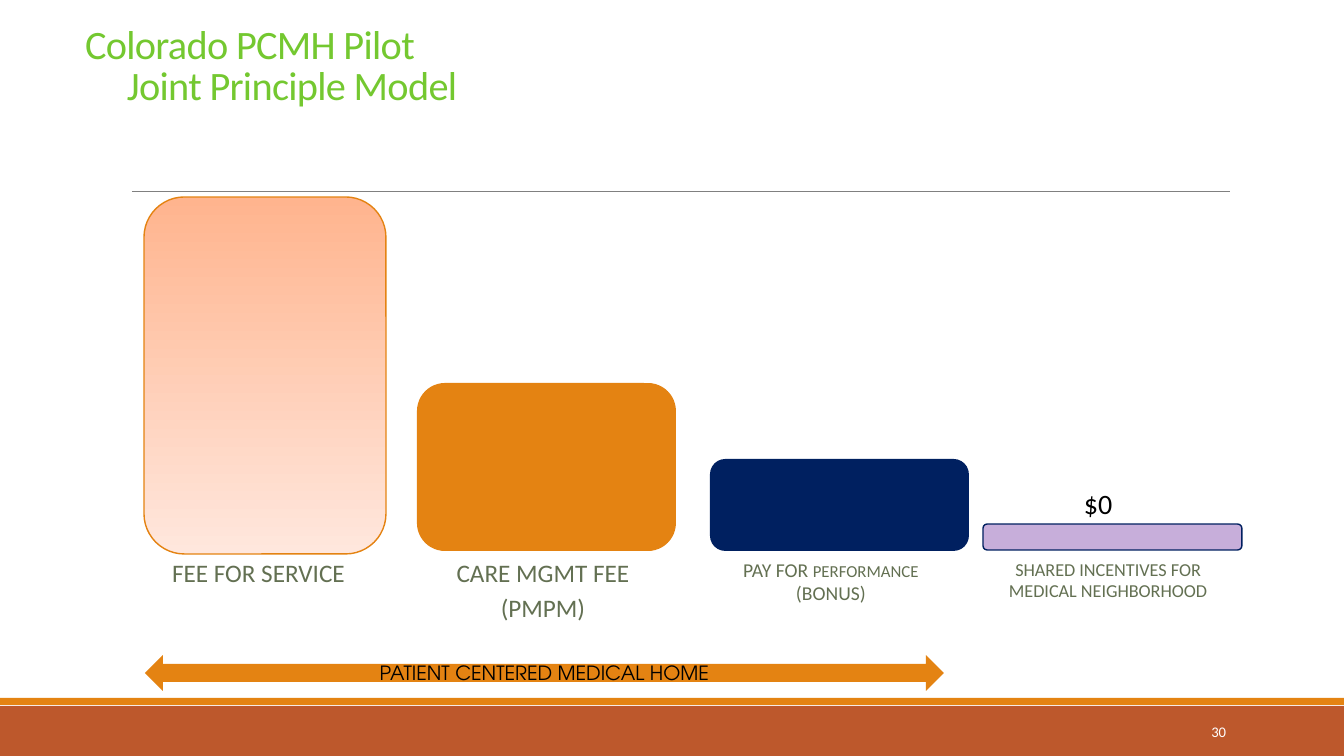
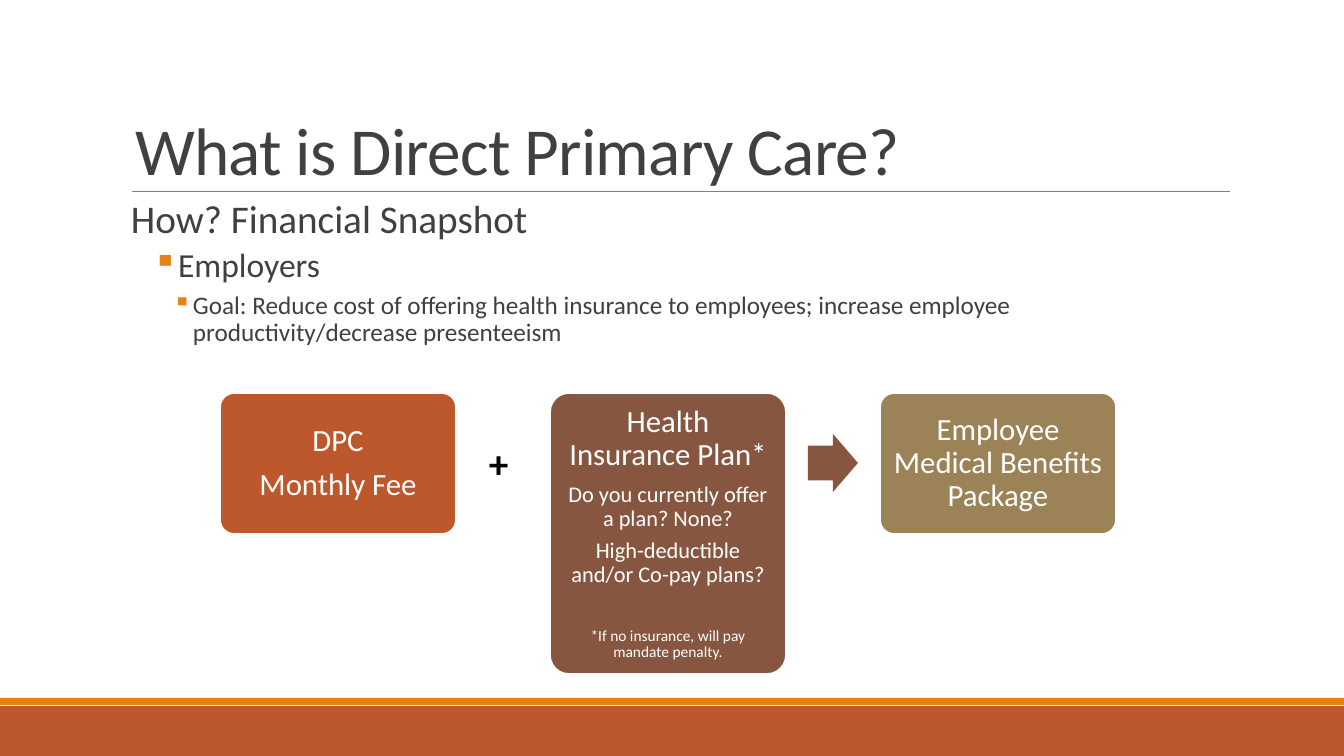
import lxml.etree
import pptx
import pptx.dml.color
import pptx.enum.shapes
import pptx.enum.text
import pptx.oxml.ns
import pptx.util

SCALE = 914400 / 100.8
SHAPE = pptx.enum.shapes.MSO_SHAPE
ALIGN = pptx.enum.text.PP_ALIGN
ANCHOR = pptx.enum.text.MSO_ANCHOR
RUST, ORANGE, GREEN, GRAY = "BD582C", "E48312", "74C830", "404040"
BROWN, TAN, OLIVE, NAVY = "865640", "9B8357", "637052", "002060"
PURPLE, WHITE, BLACK, RULE = "7030A0", "FFFFFF", "000000", "808080"
PEACH = ("FFB48E", "FFE7DD")


def px(*lengths):
    """Turn pixel lengths into EMU."""
    return [pptx.util.Emu(round(length * SCALE)) for length in lengths]


def rgb(code):
    """Turn a hex string into a colour."""
    return pptx.dml.color.RGBColor.from_string(code)


def assign(target, values):
    """Set each named attribute on the target."""
    for name, value in values.items():
        setattr(target, name, value)


def add_xml(parent, tag, **attributes):
    """Append a DrawingML element."""
    name = pptx.oxml.ns.qn("a:" + tag)
    return lxml.etree.SubElement(parent, name, attributes)


class Slides:
    """Holds the deck, its style and the current page."""

    def __init__(self):
        """Open an empty deck."""
        self.deck = pptx.Presentation()
        size = px(1344, 756)
        assign(self.deck, {"slide_width": size[0], "slide_height": size[1]})
        self.page = None

    def start(self, place, title_paragraphs, size, color):
        """Add a page with the bands, rule and title."""
        self.page = self.deck.slides.add_slide(self.deck.slide_layouts[6])
        self.shape(SHAPE.RECTANGLE, (0, 706, 1344, 50), RUST)
        self.shape(SHAPE.RECTANGLE, (0, 698, 1344, 7), ORANGE)
        self.rule(132, 1230, 191)
        paragraphs = [
            {"spans": [(words, size)], "left": left, "format": {"line_spacing": 0.85}}
            for words, left in title_paragraphs
        ]
        self.text(place, paragraphs, color, anchor=ANCHOR.BOTTOM, tracking=-50)

    def rule(self, left, right, top):
        """Draw a thin horizontal line."""
        line = self.page.shapes.add_connector(
            pptx.enum.shapes.MSO_CONNECTOR.STRAIGHT, *px(left, top, right, top))
        line.line.color.rgb = rgb(RULE)
        line.line.width = pptx.util.Pt(0.5)
        add_xml(line._element.spPr, "effectLst")

    def shape(self, kind, place, fill, line=None, width=1, adjust=(), opacity=None):
        """Draw a preset shape with a plain or gradient fill."""
        shape = self.page.shapes.add_shape(kind, *px(*place))
        shape.shadow.inherit = False
        for index, value in enumerate(adjust):
            shape.adjustments[index] = value
        if isinstance(fill, tuple):
            shape.fill.gradient()
            shape.fill.gradient_angle = 270
            for stop, color in zip(shape.fill.gradient_stops, fill):
                stop.color.rgb = rgb(color)
        else:
            shape.fill.solid()
            shape.fill.fore_color.rgb = rgb(fill)
        if opacity:
            color = shape._element.spPr.find(".//" + pptx.oxml.ns.qn("a:srgbClr"))
            add_xml(color, "alpha", val=str(opacity * 1000))
        if line:
            shape.line.color.rgb = rgb(line)
            shape.line.width = pptx.util.Pt(width)
        else:
            shape.line.fill.background()
        return shape

    def text(self, place, paragraphs, color, **style):
        """Place a text box."""
        box = self.page.shapes.add_textbox(*px(*place))
        self.fill_text(box, paragraphs, color, **style)

    def fill_text(self, box, paragraphs, color, font="Calibri", anchor=ANCHOR.TOP,
                  inset=(10, 5), wrap=True, tracking=0, bold=False):
        """Fill a box with styled paragraphs."""
        across, down = px(*inset)
        frame = box.text_frame
        assign(frame, {"word_wrap": wrap, "vertical_anchor": anchor,
                       "margin_left": across, "margin_right": across,
                       "margin_top": down, "margin_bottom": down})
        for index, content in enumerate(paragraphs):
            para = frame.paragraphs[0] if index == 0 else frame.add_paragraph()
            assign(para, {"alignment": ALIGN.LEFT, **content.get("format", {})})
            properties = para._p.get_or_add_pPr()
            properties.set("marL", str(px(content.get("left", 0))[0]))
            properties.set("indent", "0")
            if "bullet" in content:
                properties.set("indent", str(px(-20)[0]))
                add_xml(add_xml(properties, "buClr"), "srgbClr", val=ORANGE)
                add_xml(properties, "buChar", char=content["bullet"])
            for words, size in content["spans"]:
                span = para.add_run()
                span.text = words
                assign(span.font, {"name": font, "size": pptx.util.Pt(size), "bold": bold})
                span.font.color.rgb = rgb(color)
                if tracking:
                    span._r.get_or_add_rPr().set("spc", str(tracking))

    def label(self, place, lines, color=OLIVE, align=ALIGN.CENTER):
        """Place a caption, one paragraph per list of spans."""
        paragraphs = [
            {"spans": spans, "format": {
                "alignment": align, "line_spacing": 0.95,
                "space_before": pptx.util.Pt(round(spans[0][1] * 0.05, 1)),
                "space_after": pptx.util.Pt(round(spans[0][1] * 0.2, 1))}}
            for spans in lines
        ]
        self.text(place, paragraphs, color)

    def card(self, place, fill, radius, lines):
        """Draw a rounded card; each line is words, size and space before."""
        card = self.shape(SHAPE.ROUNDED_RECTANGLE, place, fill, WHITE, 1.25, [radius])
        paragraphs = [
            {"spans": [(words, size)], "format": {
                "alignment": ALIGN.CENTER, "line_spacing": 0.9,
                "space_before": pptx.util.Pt(before),
                "space_after": pptx.util.Pt(round(size * 0.35, 1))}}
            for words, size, before in lines
        ]
        self.fill_text(card, paragraphs, WHITE, anchor=ANCHOR.MIDDLE, inset=(8, 8))


def payment_model(slides):
    """Build the payment model page."""
    slides.start((75, 55, 1171, 59),
                 [("Colorado PCMH Pilot", 0), ("Joint Principle Model", 42)], 28.8, GREEN)
    slides.text((1092, 712, 144, 40),
                [{"spans": [("30", 10.5)], "format": {"alignment": ALIGN.RIGHT}}],
                WHITE, anchor=ANCHOR.MIDDLE)
    columns = [
        ((144, 197, 242, 357), {"fill": PEACH, "line": ORANGE},
         (161, 195), [[("FEE FOR SERVICE", 18)]]),
        ((417, 383, 259, 168), {"fill": ORANGE},
         (428, 230), [[("CARE MGMT FEE", 18)], [("(PMPM)", 18)]]),
        ((710, 459, 259, 92), {"fill": NAVY},
         (725, 212), [[("PAY FOR ", 14), ("PERFORMANCE", 12), (" (BONUS)", 14)]]),
        ((983, 524, 259, 26), {"fill": PURPLE, "line": NAVY, "opacity": 39},
         (980, 256), [[("SHARED INCENTIVES FOR MEDICAL NEIGHBORHOOD", 13)]]),
    ]
    for bar, style, (left, width), lines in columns:
        slides.shape(SHAPE.ROUNDED_RECTANGLE, bar, **style)
        slides.label((left, 555, width, 60), lines)
    slides.label((1074, 484, 69, 42), [[("$0", 20)]], BLACK, ALIGN.LEFT)
    arrow = slides.shape(SHAPE.LEFT_RIGHT_ARROW, (145, 655, 799, 36), ORANGE)
    slides.fill_text(arrow, [{"spans": [("PATIENT CENTERED MEDICAL HOME", 14)],
                              "format": {"alignment": ALIGN.CENTER}}],
                     BLACK, font="TeX Gyre Adventor", anchor=ANCHOR.MIDDLE, wrap=False)


def primary_care(slides):
    """Build the direct primary care page."""
    slides.start((125, 34, 1109, 160), [("What is Direct Primary Care?", 0)], 48, GRAY)
    outline = [
        ("How? Financial Snapshot", 28, 12, 2, {}),
        ("Employers", 24, 2, 4, {"left": 42, "bullet": "▪"}),
        ("Goal: Reduce cost of offering health insurance to employees; increase employee "
         "productivity/decrease presenteeism", 18, 2, 4, {"left": 62, "bullet": "▪"}),
    ]
    slides.text((131, 195, 1109, 170), [
        {"spans": [(words, size)], **marks, "format": {
            "line_spacing": 0.9, "space_before": pptx.util.Pt(before),
            "space_after": pptx.util.Pt(after)}}
        for words, size, before, after, marks in outline
    ], GRAY, inset=(0, 5))
    cards = [
        (141, RUST, 0.1, [("DPC", 22, 0), ("Monthly Fee", 22, 0)]),
        (281, BROWN, 0.08, [
            ("Health Insurance Plan*", 22, 0),
            ("Do you currently offer a plan? None?", 16, 0),
            ("High-deductible and/or Co-pay plans?", 16, 0),
            ("*If no insurance, will pay mandate penalty.", 11, 23)]),
        (141, TAN, 0.1, [("Employee Medical Benefits Package", 22, 0)]),
    ]
    for index, (height, *content) in enumerate(cards):
        slides.card((220 + 330 * index, 393, 236, height), *content)
    slides.shape(SHAPE.RIGHT_ARROW, (808, 434, 50, 58), BROWN, adjust=[0.6, 0.5])
    slides.text((479, 434, 50, 57), [{"spans": [("+", 28)]}], BLACK, bold=True)


def main():
    """Build and save the deck."""
    slides = Slides()
    payment_model(slides)
    primary_care(slides)
    slides.deck.save("out.pptx")


if __name__ == "__main__":
    main()
